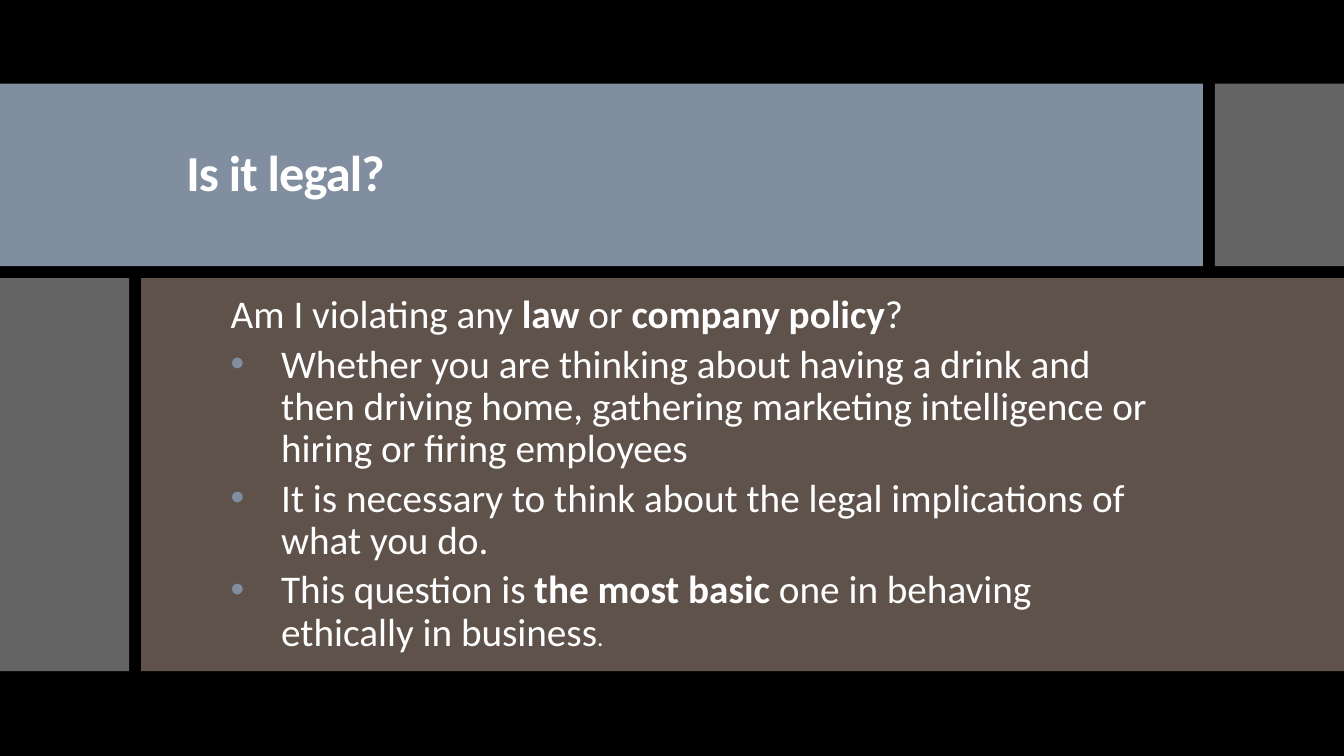
from lxml import etree
from pptx import Presentation
from pptx.dml.color import RGBColor
from pptx.enum.shapes import MSO_SHAPE
from pptx.enum.text import MSO_ANCHOR
from pptx.oxml.ns import qn
from pptx.util import Inches, Pt

RECT = MSO_SHAPE.RECTANGLE
MIDDLE = MSO_ANCHOR.MIDDLE
COLORS = {"back": "000000", "blue": "818E9F", "gray": "C8C8C8",
          "brown": "9D897D", "text": "FFFFFF"}
WIDE, HIGH = 13.33, 7.5
TOP, HEAD = 0.83, 1.81
LOW, BODY = 2.76, 3.9

# Each run is (words, bold, size)
LINES = [
    (False, [("Am I violating any ", False, 28), ("law", True, 28),
             (" or ", False, 28), ("company policy", True, 28),
             ("?", False, 28)]),
    (True, [("Whether you are thinking about having a drink and then driving "
             "home, gathering marketing intelligence or hiring or firing "
             "employees", False, 28)]),
    (True, [("It is necessary to think about the legal implications of what "
             "you do.", False, 28)]),
    (True, [("This question is ", False, 28), ("the most basic", True, 28),
            (" one in behaving ethically in business", False, 28),
            (".", False, 18)]),
]


class Deck:
    font = "Calibri"

    def __init__(self):
        self.show = Presentation()
        self.show.slide_width = Inches(WIDE)
        self.show.slide_height = Inches(HIGH)
        self.slide = self.show.slides.add_slide(self.show.slide_layouts[6])
        fill = self.slide.background.fill
        fill.solid()
        fill.fore_color.rgb = self.color("back")

    def color(self, name):
        return RGBColor.from_string(COLORS[name])

    def panel(self, x, y, w, h, name, alpha=100):
        """Add a borderless block; alpha is its opacity in percent."""
        box = self.slide.shapes.add_shape(
            RECT, Inches(x), Inches(y), Inches(w), Inches(h))
        box.shadow.inherit = False
        box.line.fill.background()
        box.fill.solid()
        box.fill.fore_color.rgb = self.color(name)
        if alpha < 100:
            tint = box.fill._xPr.find(".//" + qn("a:srgbClr"))
            etree.SubElement(tint, qn("a:alpha"), val=str(alpha * 1000))

    def frame(self, x, y, w, h):
        box = self.slide.shapes.add_textbox(
            Inches(x), Inches(y), Inches(w), Inches(h))
        text = box.text_frame
        text.word_wrap = True
        text.vertical_anchor = MIDDLE
        return text

    def run(self, para, words, bold, size):
        run = para.add_run()
        run.text = words
        run.font.name = self.font
        run.font.size = Pt(size)
        run.font.bold = bold
        run.font.color.rgb = self.color("text")
        return run

    def title(self, words, *place):
        para = self.frame(*place).paragraphs[0]
        para.line_spacing = 0.9
        run = self.run(para, words, True, 36)
        run.font._element.set("spc", "-60")

    def body(self, lines, *place):
        text = self.frame(*place)
        for i, (dot, runs) in enumerate(lines):
            para = text.add_paragraph() if i else text.paragraphs[0]
            para.line_spacing = 0.9
            para.space_before = para.space_after = Pt(2.5)
            self.indent(para, dot)
            for part in runs:
                self.run(para, *part)

    def indent(self, para, dot):
        props = para._p.get_or_add_pPr()
        props.set("marL", str(Inches(0.94 if dot else 0.44)))
        props.set("indent", str(Inches(-0.5 if dot else 0)))
        if dot:
            tint = etree.SubElement(props, qn("a:buClr"))
            etree.SubElement(tint, qn("a:srgbClr"), val=COLORS["blue"])
            etree.SubElement(props, qn("a:buFont"), typeface="Arial")
            etree.SubElement(props, qn("a:buChar"), char="•")


def main():
    deck = Deck()
    deck.panel(0, TOP, 11.93, HEAD, "blue")
    deck.panel(12.05, TOP, WIDE - 12.05, HEAD, "gray", 50)
    deck.panel(0, LOW, 1.28, BODY, "gray", 50)
    deck.panel(1.4, LOW, WIDE - 1.4, BODY, "brown", 60)
    deck.title("Is it legal?", 1.75, 1.19, 9.82, 1.09)
    deck.body(LINES, 1.75, LOW, 9.82, BODY)
    deck.show.save("out.pptx")


if __name__ == "__main__":
    main()
